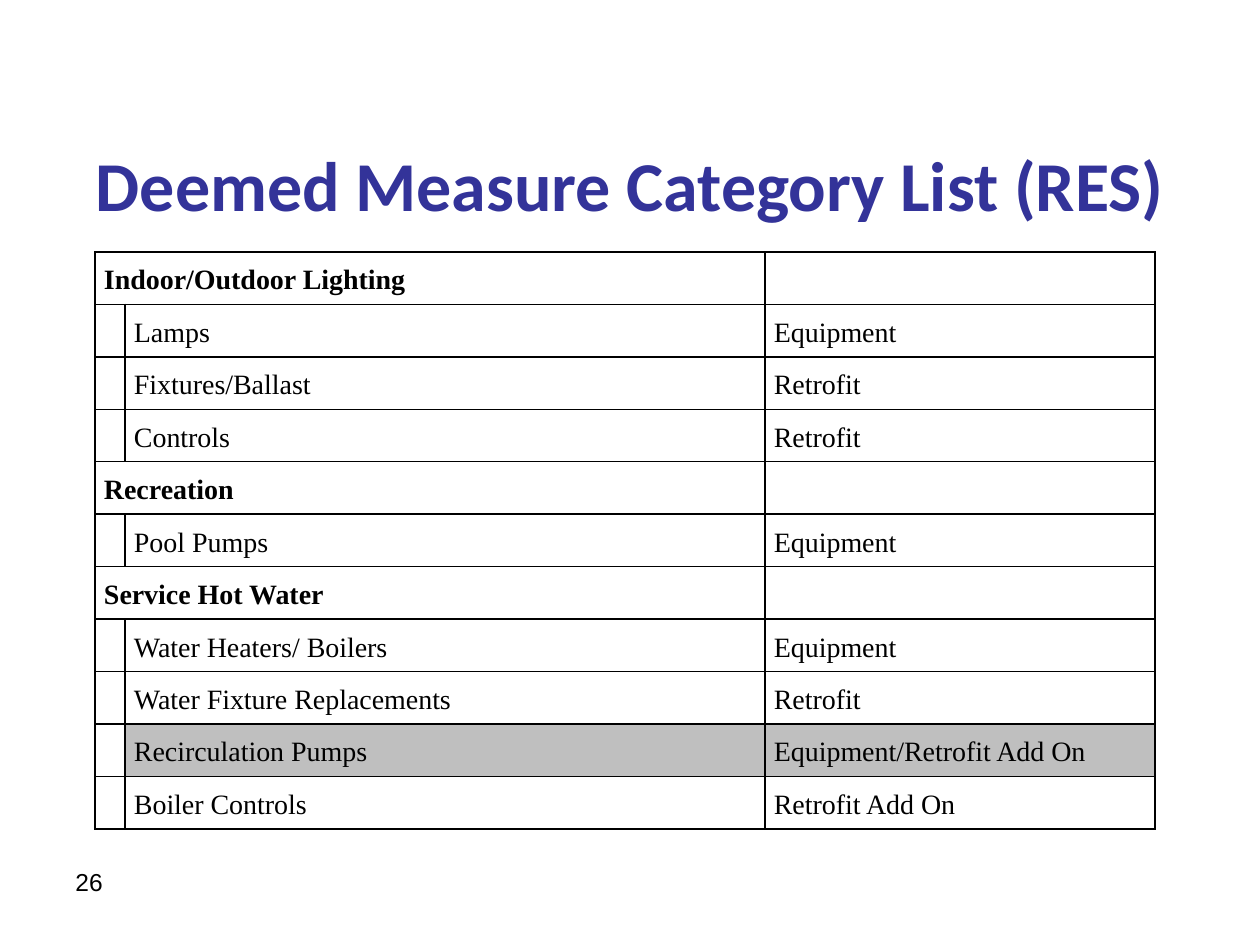
from lxml import etree
from pptx import Presentation, util as u
from pptx.dml.color import RGBColor
from pptx.enum import text
from pptx.oxml.ns import qn

PX = 914400 // 126  # EMU per px
COLORS = {"ink": "000000", "title": "333399", "highlight": "BFBFBF"}

# Each category with its measures and their types
CATEGORIES = {
    "Indoor/Outdoor Lighting": [
        ("Lamps", "Equipment"),
        ("Fixtures/Ballast", "Retrofit"),
        ("Controls", "Retrofit"),
    ],
    "Recreation": [("Pool Pumps", "Equipment")],
    "Service Hot Water": [
        ("Water Heaters/ Boilers", "Equipment"),
        ("Water Fixture Replacements", "Retrofit"),
        ("Recirculation Pumps", "Equipment/Retrofit Add On"),
        ("Boiler Controls", "Retrofit Add On"),
    ],
}
HIGHLIGHTED = "Recirculation Pumps"


class Deck:
    """Holds the style and the current slide."""

    def __init__(self, width, height):
        self.prs = Presentation()
        self.prs.slide_width, self.prs.slide_height = width * PX, height * PX
        self.slide = self.prs.slides.add_slide(self.prs.slide_layouts[6])

    def style(self, paragraph, font, size, color="ink", bold=False):
        for target in (paragraph, *paragraph.runs):
            target.font.name = font
            target.font.size = u.Pt(size)
            target.font.bold = bold
            target.font.color.rgb = RGBColor.from_string(COLORS[color])

    def label(self, words, box, font, size, color="ink", bold=False,
              align=text.PP_ALIGN.LEFT, anchor=text.MSO_ANCHOR.TOP):
        frame = self.slide.shapes.add_textbox(*(n * PX for n in box)).text_frame
        frame.word_wrap = True
        frame.vertical_anchor = anchor
        frame.text = words
        frame.paragraphs[0].alignment = align
        self.style(frame.paragraphs[0], font, size, color, bold)

    def table(self, rows, left, top, widths, height):
        grid = self.slide.shapes.add_table(
            rows, len(widths), left * PX, top * PX, sum(widths) * PX, height * PX).table
        grid.first_row = grid.horz_banding = False
        for column, width in zip(grid.columns, widths):
            column.width = width * PX
        for row in grid.rows:
            row.height = height * PX // rows
        for cell in grid.iter_cells():
            self.cell(cell)
        return grid

    def cell(self, cell, words="", bold=False, fill=None):
        cell.text = words
        cell.vertical_anchor = text.MSO_ANCHOR.MIDDLE
        cell.margin_left = cell.margin_right = 9 * PX
        cell.margin_top = cell.margin_bottom = 0
        cell.text_frame.paragraphs[0].line_spacing = 1.15
        self.style(cell.text_frame.paragraphs[0], "Times New Roman", 16, bold=bold)
        self.borders(cell)
        if fill:
            cell.fill.solid()
            cell.fill.fore_color.rgb = RGBColor.from_string(COLORS[fill])
        else:
            cell.fill.background()

    def borders(self, cell):
        props = cell._tc.get_or_add_tcPr()
        for i, side in enumerate(("a:lnL", "a:lnR", "a:lnT", "a:lnB")):
            for old in props.findall(qn(side)):
                props.remove(old)
            line = etree.Element(qn(side), w=str(u.Pt(1)))
            solid = etree.SubElement(line, qn("a:solidFill"))
            etree.SubElement(solid, qn("a:srgbClr"), val=COLORS["ink"])
            props.insert(i, line)


def main():
    deck = Deck(1260, 945)

    # Page number
    deck.label("26", (63, 861, 231, 66), "Arial", 14)

    # Measure list: category rows span the indent column
    row_count = sum(1 + len(measures) for measures in CATEGORIES.values())
    grid = deck.table(row_count, 95, 252, (30, 640, 390), 577)
    row = 0
    for category, measures in CATEGORIES.items():
        grid.cell(row, 0).merge(grid.cell(row, 1))
        deck.cell(grid.cell(row, 0), category, bold=True)
        for row, (measure, kind) in enumerate(measures, row + 1):
            fill = "highlight" if measure == HIGHLIGHTED else None
            deck.cell(grid.cell(row, 1), measure, fill=fill)
            deck.cell(grid.cell(row, 2), kind, fill=fill)
        row += 1

    # Title
    deck.label("Deemed Measure Category List (RES)", (63, 116, 1134, 136), "Calibri", 40,
               "title", True, text.PP_ALIGN.CENTER, text.MSO_ANCHOR.MIDDLE)

    deck.prs.save("out.pptx")


if __name__ == "__main__":
    main()
